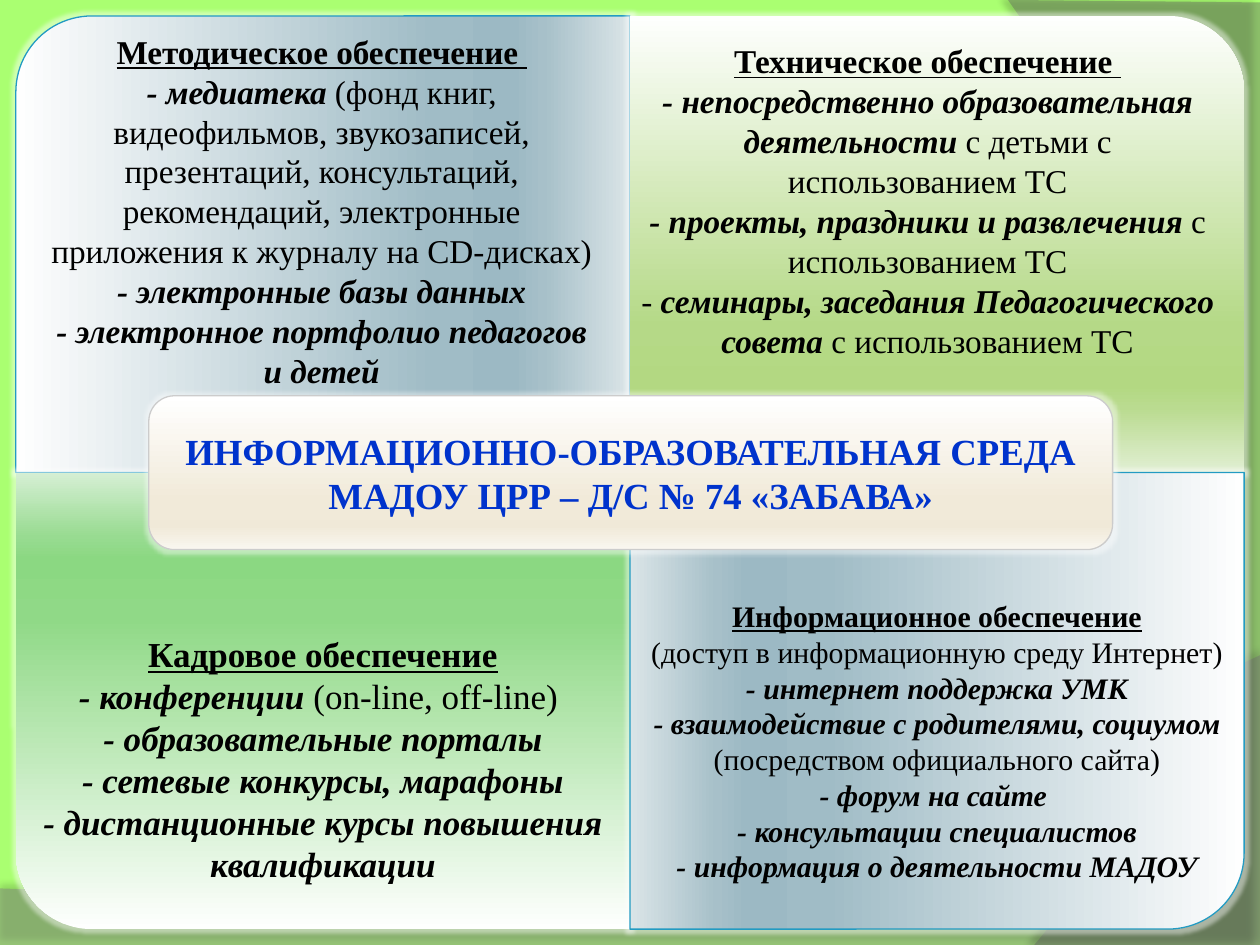
"""Build a slide with four support panels around a central title."""
from dataclasses import dataclass

import pptx
import pptx.dml.color
import pptx.enum.shapes
import pptx.enum.text
import pptx.oxml
import pptx.oxml.ns
import pptx.util
from pptx.dml.color import RGBColor
from pptx.util import Cm

FONT = "Times New Roman"
LIME = RGBColor(0xAA, 0xFF, 0x71)
BLACK = RGBColor(0, 0, 0)
WHITE = RGBColor(0xFF, 0xFF, 0xFF)
TITLE_BLUE = RGBColor(0x00, 0x33, 0xCC)
EDGE_BLUE = RGBColor(0x23, 0x9B, 0xC2)
EDGE_GREY = RGBColor(0xCC, 0xCC, 0xCC)
SWOOSH_GREY = RGBColor(0x7F, 0x7F, 0x7F)
SWOOSH_DARK = RGBColor(0x5E, 0x5E, 0x5E)


def palette(*codes: str) -> list[RGBColor]:
    """Turn hex codes into colours."""
    return [RGBColor.from_string(code) for code in codes]


STOPS = (0, 68, 81, 86, 100)
BLUE = palette("FEFEFE", "A0BCC6", "9CB9C4", "A7C0C9", "DAE4E7")
OLIVE = palette("FEFFFE", "B5D987", "B3D882", "BADB90", "E1EFD3")
GREEN = palette("FEFFFE", "90D987", "8BD882", "98DB91", "D6EFD4")
CREAM = palette("FFFFFF", "F1EAD9", "F0E9D8", "F1EBDB", "F9F6EF")

WIDTH, HEIGHT, MARGIN = 25.4, 19.05, 0.32
PANEL_WIDTH = WIDTH / 2 - MARGIN
PANEL_HEIGHT = HEIGHT / 2 - MARGIN
TEXT_HEIGHT = 6.91


@dataclass
class Span:
    text: str
    bold: bool = False
    italic: bool = False
    underline: bool = False


@dataclass
class Panel:
    column: int
    row: int
    rotation: int
    colours: list[RGBColor]
    edge: RGBColor | None
    text_left: float
    text_top: float
    text_width: float
    inset: float
    extra_bottom: float
    size: int
    lines: list[list[Span]]


def head(text: str) -> list[Span]:
    """Make an underlined heading line."""
    return [Span(text, bold=True, underline=True)]


def item(key: str, rest: str = "") -> list[Span]:
    """Make a line with a bold italic start and a plain rest."""
    return [Span(key, bold=True, italic=True)] + ([Span(rest)] if rest else [])


PANELS = [
    Panel(0, 0, 270, BLUE, EDGE_BLUE, 0.58, 0.79, 11.81, 0.38, 0, 19, [
        head("Методическое обеспечение "),
        item("- медиатека ", "(фонд книг, видеофильмов, звукозаписей, презентаций, консультаций, "
             "рекомендаций, электронные приложения к журналу на CD-дисках)"),
        item("- электронные базы данных"),
        item("- электронное портфолио педагогов и детей")]),
    Panel(1, 0, 0, OLIVE, None, 12.5, 0.58, 12.4, 0.38, 0, 19, [
        head("Техническое обеспечение "),
        item("- непосредственно образовательная деятельности ", "с детьми с использованием ТС"),
        item("- проекты, праздники и развлечения ", "с использованием ТС"),
        [Span("- ")] + item("семинары, заседания Педагогического совета ", "с использованием ТС")]),
    Panel(0, 1, 180, GREEN, None, 0.32, 11.84, 12.38, 0.41, 0, 20, [
        head("Кадровое обеспечение"),
        item("- конференции", " (on-line, off-line) "),
        item("- образовательные порталы"),
        item("- сетевые конкурсы, марафоны"),
        item("- дистанционные курсы повышения квалификации")]),
    Panel(1, 1, 90, BLUE, EDGE_BLUE, 12.7, 11.84, 12.38, 0.33, 0.72, 17, [
        head("Информационное обеспечение"),
        [Span("(доступ в информационную среду Интернет)")],
        item("- интернет поддержка УМК"),
        item("- взаимодействие с родителями, социумом ", "(посредством официального сайта)"),
        item("- форум на сайте "),
        item("- консультации специалистов"),
        item("- информация о деятельности МАДОУ")]),
]
TITLE_LINES = [[Span("ИНФОРМАЦИОННО-ОБРАЗОВАТЕЛЬНАЯ СРЕДА", bold=True)],
               [Span("МАДОУ ЦРР – Д/С № 74 «ЗАБАВА»", bold=True)]]


def add_effect(shape, body: str) -> None:
    """Give a shape an effect list."""
    shape.shadow.inherit = False
    effects = shape.element.spPr.find(pptx.oxml.ns.qn("a:effectLst"))
    effects.append(pptx.oxml.parse_xml(body))


def effect_xml(tag: str, settings: str, colour: RGBColor, alpha: int) -> str:
    """Describe one effect with a translucent colour."""
    return (f'<a:{tag} {pptx.oxml.ns.nsdecls("a")} {settings}><a:srgbClr val="{colour}">'
            f'<a:alpha val="{alpha * 1000}"/></a:srgbClr></a:{tag}>')


def add_swoosh(page, start, corners, curves, colour: RGBColor, alpha: int, shadow: str, shade: int) -> None:
    """Draw a translucent outline of straight corners and Bezier curves."""
    points = [start, *corners]
    for first, second, end in curves:
        origin = points[-1]
        for step in range(1, 41):
            t = step / 40
            weights = ((1 - t) ** 3, 3 * t * (1 - t) ** 2, 3 * t * t * (1 - t), t ** 3)
            points.append(tuple(sum(w * p[axis] for w, p in zip(weights, (origin, first, second, end)))
                                for axis in (0, 1)))
    builder = page.shapes.build_freeform(Cm(points[0][0]), Cm(points[0][1]))
    builder.add_line_segments([(Cm(x), Cm(y)) for x, y in points[1:]], close=True)
    shape = builder.convert_to_shape()
    shape.fill.solid()
    shape.fill.fore_color.rgb = colour
    shape.line.fill.background()
    tint = shape.element.spPr.find(".//" + pptx.oxml.ns.qn("a:srgbClr"))
    tint.append(pptx.oxml.parse_xml(f'<a:alpha {pptx.oxml.ns.nsdecls("a")} val="{alpha * 1000}"/>'))
    add_effect(shape, effect_xml("outerShdw", shadow, BLACK, shade))


def add_block(page, kind, left: float, top: float, width: float, height: float,
              colours: list[RGBColor], edge: RGBColor | None):
    """Draw a glowing shape with a vertical gradient."""
    shape = page.shapes.add_shape(kind, Cm(left), Cm(top), Cm(width), Cm(height))
    shape.fill.gradient()
    shape.fill.gradient_angle = 270
    stops = shape.element.spPr.find(".//" + pptx.oxml.ns.qn("a:gsLst"))
    stops.clear()
    for place, colour in zip(STOPS, colours):
        stops.append(pptx.oxml.parse_xml(
            f'<a:gs {pptx.oxml.ns.nsdecls("a")} pos="{place * 1000}"><a:srgbClr val="{colour}"/></a:gs>'))
    if edge is None:
        shape.line.fill.background()
    else:
        shape.line.color.rgb = edge
        shape.line.width = pptx.util.Pt(0.75)
    add_effect(shape, effect_xml("glow", 'rad="63500"', WHITE, 45))
    return shape


def fill_text(box, left: float, top: float, width: float, height: float, inset: float,
              lines: list[list[Span]], size: int, colour: RGBColor, extra_bottom: float = 0) -> None:
    """Place a placeholder on top and write centred lines in it."""
    box.element.getparent().append(box.element)
    box.left, box.top, box.width, box.height = Cm(left), Cm(top), Cm(width), Cm(height)
    frame = box.text_frame
    frame.word_wrap = True
    frame.auto_size = pptx.enum.text.MSO_AUTO_SIZE.NONE
    frame.vertical_anchor = pptx.enum.text.MSO_ANCHOR.MIDDLE
    frame.margin_left = frame.margin_right = frame.margin_top = Cm(inset)
    frame.margin_bottom = Cm(inset + extra_bottom)
    for index, line in enumerate(lines):
        para = frame.add_paragraph() if index else frame.paragraphs[0]
        para.alignment = pptx.enum.text.PP_ALIGN.CENTER
        para.space_before = para.space_after = pptx.util.Pt(0)
        settings = para._p.get_or_add_pPr()
        settings.set("marL", "0")
        settings.set("indent", "0")
        settings.append(pptx.oxml.parse_xml(f'<a:buNone {pptx.oxml.ns.nsdecls("a")}/>'))
        for part in line:
            span = para.add_run()
            span.text = part.text
            font = span.font
            font.name, font.size, font.color.rgb = FONT, pptx.util.Pt(size), colour
            font.bold, font.italic, font.underline = part.bold, part.italic, part.underline


def add_panel(page, panel: Panel, box) -> None:
    """Draw one quarter of the slide with its text."""
    width, height = PANEL_WIDTH, PANEL_HEIGHT
    middle_x = MARGIN + (panel.column + 0.5) * width
    middle_y = MARGIN + (panel.row + 0.5) * height
    if panel.rotation % 180:
        width, height = height, width
    shape = add_block(page, pptx.enum.shapes.MSO_SHAPE.ROUND_1_RECTANGLE, middle_x - width / 2,
                      middle_y - height / 2, width, height, panel.colours, panel.edge)
    shape.rotation = panel.rotation
    fill_text(box, panel.text_left, panel.text_top, panel.text_width, TEXT_HEIGHT, panel.inset,
              panel.lines, panel.size, BLACK, panel.extra_bottom)


def main() -> None:
    """Build and save the deck."""
    deck = pptx.Presentation()
    deck.slide_width, deck.slide_height = Cm(WIDTH), Cm(HEIGHT)
    page = deck.slides.add_slide(deck.slide_layouts.get_by_name("Comparison"))
    page.background.fill.solid()
    page.background.fill.fore_color.rgb = LIME
    title, *bodies = list(page.placeholders)
    add_swoosh(page, (0, 17.91), [(0, HEIGHT), (WIDTH, HEIGHT), (WIDTH, 13.21)],
               [((14.2, 18.52), (9.93, 18.26), (0, 17.91))], SWOOSH_GREY, 45,
               'blurRad="50800" dist="44450" dir="16200000"', 35)
    add_swoosh(page, (WIDTH, 0.05), [(WIDTH, HEIGHT), (20.85, HEIGHT)],
               [((23.75, 15.72), (25.86, 7.62), (20.32, 0))], SWOOSH_DARK, 40,
               'blurRad="50800" dist="50800" dir="10800000"', 45)
    for panel, box in zip(PANELS, bodies):
        add_panel(page, panel, box)
    add_block(page, pptx.enum.shapes.MSO_SHAPE.ROUNDED_RECTANGLE, 3, 7.98, 19.43, 3.1, CREAM, EDGE_GREY)
    fill_text(title, 3.15, 8.13, 19.13, 2.8, 0.23, TITLE_LINES, 21, TITLE_BLUE)
    deck.save("out.pptx")


if __name__ == "__main__":
    main()
